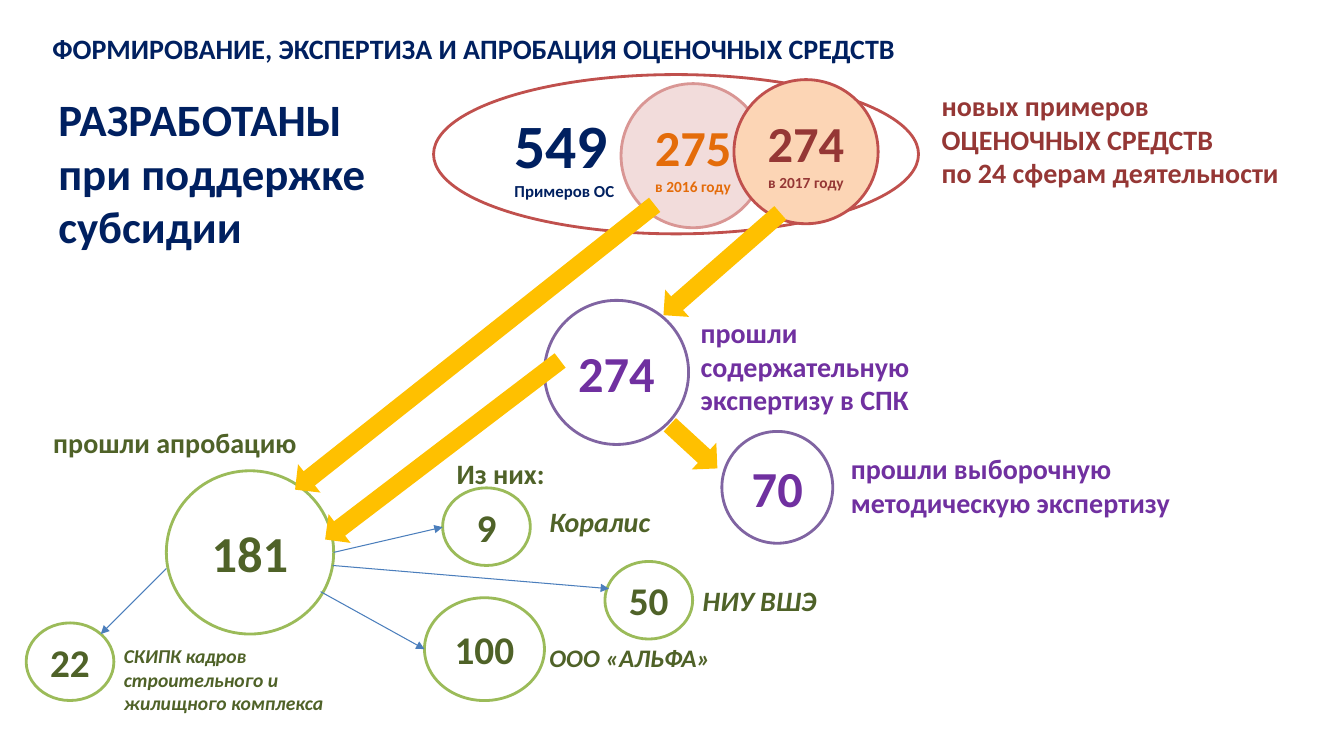
"""Build the slide on forming, reviewing and piloting assessment tools."""
from lxml.etree import SubElement
from pptx import Presentation
from pptx.dml.color import RGBColor
from pptx.enum.shapes import MSO_CONNECTOR as CONNECTOR, MSO_SHAPE as SHAPE
from pptx.enum.text import MSO_ANCHOR as ANCHOR, MSO_AUTO_SIZE as AUTO_SIZE, PP_ALIGN as ALIGN
from pptx.oxml.ns import qn
from pptx.util import Pt

PX = 9144
FONT = "Calibri"
TITLE_ONLY = 5
WHITE = RGBColor(0xFF, 0xFF, 0xFF)
NAVY = RGBColor(0x00, 0x20, 0x60)
RED = RGBColor(0xC0, 0x50, 0x4D)
DARK_RED = RGBColor(0x95, 0x37, 0x35)
ROSE = RGBColor(0xD9, 0x96, 0x94)
PALE_ROSE = RGBColor(0xF2, 0xDC, 0xDB)
PEACH = RGBColor(0xFC, 0xD5, 0xB5)
ORANGE = RGBColor(0xE4, 0x6C, 0x0A)
PURPLE = RGBColor(0x70, 0x30, 0xA0)
LILAC = RGBColor(0x80, 0x64, 0xA2)
GREEN = RGBColor(0x9B, 0xBB, 0x59)
DARK_GREEN = RGBColor(0x4F, 0x62, 0x28)
GOLD = RGBColor(0xFF, 0xC0, 0x00)
BLUE = RGBColor(0x4B, 0x7E, 0xBC)

CIRCLES = [
    ((430, 74, 481, 158), WHITE, RED, NAVY, [("549", 44), ("Примеров ОС", 12)], ALIGN.LEFT),
    ((616, 83, 143, 143), PALE_ROSE, ROSE, ORANGE, [("275", 36), ("в 2016 году", 11)], ALIGN.CENTER),
    ((728, 79, 143, 143), PEACH, RED, DARK_RED, [("274", 36), ("в 2017 году", 11)], ALIGN.CENTER),
    ((540, 298, 143, 143), WHITE, LILAC, PURPLE, [("274", 36)], ALIGN.CENTER),
    ((716, 428, 110, 111), WHITE, LILAC, PURPLE, [("70", 36)], ALIGN.CENTER),
    ((165, 467, 166, 162), WHITE, GREEN, DARK_GREEN, [("181", 36)], ALIGN.CENTER),
    ((439, 484, 87, 77), WHITE, GREEN, DARK_GREEN, [("9", 28)], ALIGN.CENTER),
    ((600, 557, 87, 77), WHITE, GREEN, DARK_GREEN, [("50", 28)], ALIGN.CENTER),
    ((421, 593, 119, 102), WHITE, GREEN, DARK_GREEN, [("100", 28)], ALIGN.CENTER),
    ((26, 618, 87, 77), WHITE, GREEN, DARK_GREEN, [("22", 28)], ALIGN.CENTER),
]
ARROWS = [
    ((698, 185, 36, 154), 48.8),
    ((670, 411, 36, 64), 312.6),
    ((453, 117, 36, 455), 51.6),
    ((421, 300, 36, 293), 52.7),
]
LINKS = [
    ((165, 564), (100, 629)),
    ((318, 587), (421, 644)),
    ((330, 561), (604, 584)),
    ((331, 548), (439, 523)),
]
LABELS = [
    ((924, 83, 405, 111), DARK_RED, 20, False,
     ["новых примеров", "ОЦЕНОЧНЫХ СРЕДСТВ", "по 24 сферам деятельности"]),
    ((48, 86, 376, 172), NAVY, 32, False, ["РАЗРАБОТАНЫ при поддержке субсидии"]),
    ((685, 308, 236, 111), PURPLE, 20, False, ["прошли содержательную экспертизу в СПК"]),
    ((834, 443, 368, 77), PURPLE, 20, False, ["прошли выборочную методическую экспертизу"]),
    ((43, 417, 276, 44), DARK_GREEN, 20, False, ["прошли апробацию"]),
    ((443, 448, 124, 44), DARK_GREEN, 20, False, ["Из них:"]),
    ((535, 496, 160, 44), DARK_GREEN, 20, True, ["Коралис"]),
    ((687, 574, 142, 44), DARK_GREEN, 20, True, ["НИУ ВШЭ"]),
    ((535, 632, 192, 40), DARK_GREEN, 18, True, ["ООО «АЛЬФА»"]),
    ((113, 634, 243, 81), DARK_GREEN, 14, True,
     ["СКИПК кадров строительного и жилищного комплекса"]),
]


def emu(lengths):
    """Turn px lengths into EMU."""
    return [length * PX for length in lengths]


def write(frame, lines, color, align=ALIGN.LEFT, italic=False):
    """Fill a text frame with one bold run per (text, size) line."""
    frame.word_wrap = True
    for index, (text, size) in enumerate(lines):
        para = frame.add_paragraph() if index else frame.paragraphs[0]
        para.alignment = align
        span = para.add_run()
        span.text = text
        font = span.font
        font.name, font.size, font.bold, font.italic = FONT, Pt(size), True, italic
        font.color.rgb = color


def set_title(page, text):
    """Place and format the title placeholder."""
    title = page.shapes.title
    title.left, title.top, title.width, title.height = emu((33, 26, 874, 44))
    write(title.text_frame, [(text, 20)], NAVY, ALIGN.CENTER)
    title.text_frame.vertical_anchor = ANCHOR.TOP
    title.text_frame.auto_size = AUTO_SIZE.NONE


def add_circle(page, place, fill, outline, color, lines, align):
    """Add an outlined ellipse holding a figure and its caption."""
    circle = page.shapes.add_shape(SHAPE.OVAL, *emu(place))
    circle.shadow.inherit = False
    circle.fill.solid()
    circle.fill.fore_color.rgb = fill
    circle.line.color.rgb = outline
    circle.line.width = Pt(2)
    circle.text_frame.vertical_anchor = ANCHOR.MIDDLE
    write(circle.text_frame, lines, color, align)


def add_arrow(page, place, angle):
    """Add a rotated gold block arrow."""
    arrow = page.shapes.add_shape(SHAPE.DOWN_ARROW, *emu(place))
    arrow.shadow.inherit = False
    arrow.fill.solid()
    arrow.fill.fore_color.rgb = GOLD
    arrow.line.fill.background()
    arrow.rotation = angle


def add_link(page, start, end):
    """Add a thin connector with a triangular head at its end."""
    link = page.shapes.add_connector(CONNECTOR.STRAIGHT, *emu(start + end))
    link.line.color.rgb = BLUE
    link.line.width = Pt(0.75)
    properties = link._element.spPr
    SubElement(properties.find(qn("a:ln")), qn("a:tailEnd"), type="triangle")
    SubElement(properties, qn("a:effectLst"))


def add_label(page, place, color, size, italic, lines):
    """Add a wrapped text box."""
    box = page.shapes.add_textbox(*emu(place))
    write(box.text_frame, [(line, size) for line in lines], color, italic=italic)
    box.text_frame.auto_size = AUTO_SIZE.SHAPE_TO_FIT_TEXT


def main():
    """Build and save the deck."""
    deck = Presentation()
    deck.slide_width, deck.slide_height = emu((1333, 750))
    page = deck.slides.add_slide(deck.slide_layouts[TITLE_ONLY])
    set_title(page, "ФОРМИРОВАНИЕ, ЭКСПЕРТИЗА И АПРОБАЦИЯ ОЦЕНОЧНЫХ СРЕДСТВ")
    for circle in CIRCLES:
        add_circle(page, *circle)
    for arrow in ARROWS:
        add_arrow(page, *arrow)
    for link in LINKS:
        add_link(page, *link)
    for label in LABELS:
        add_label(page, *label)
    deck.save("out.pptx")


if __name__ == "__main__":
    main()
